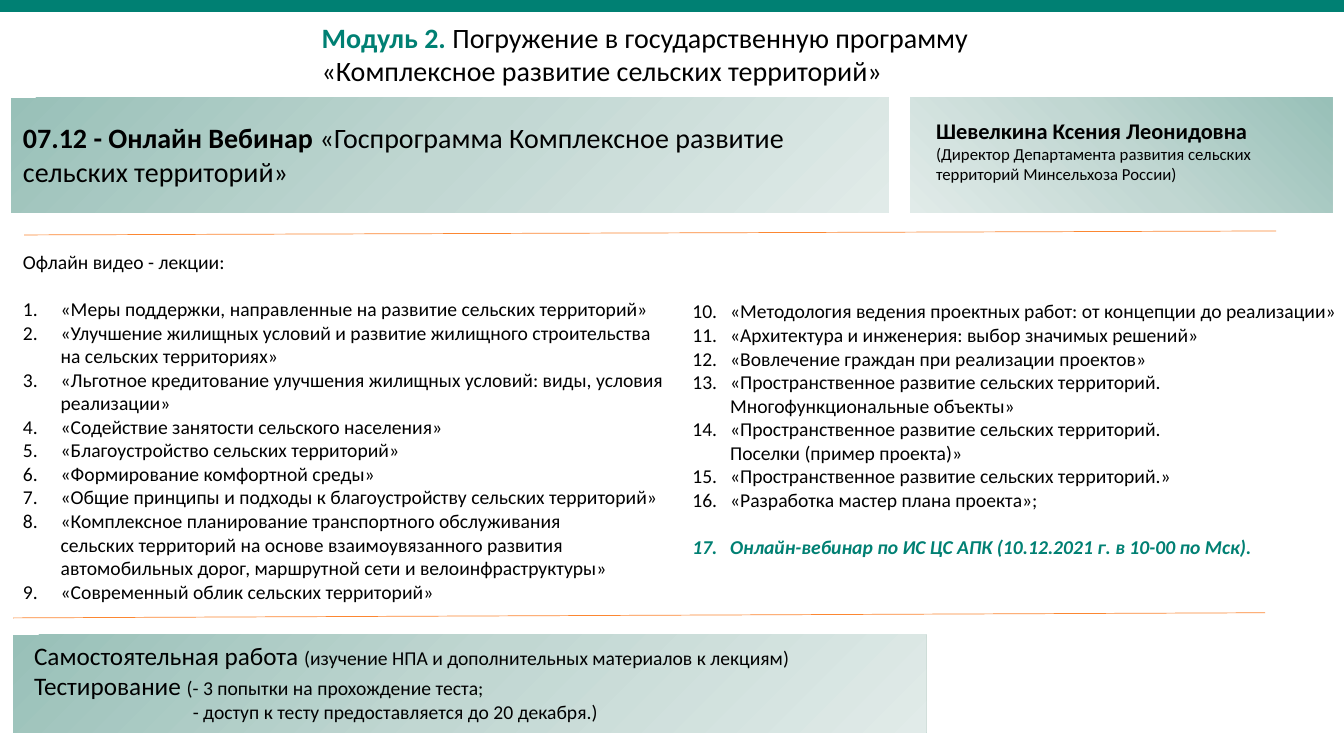
from lxml.etree import SubElement
from pptx import Presentation
from pptx.dml.color import RGBColor
from pptx.enum.shapes import MSO_CONNECTOR, MSO_SHAPE
from pptx.enum.text import MSO_ANCHOR, MSO_AUTO_SIZE, PP_ALIGN
from pptx.oxml import parse_xml
from pptx.oxml.ns import nsdecls, qn
from pptx.util import Cm, Pt

FONT = "Calibri"
GREEN = RGBColor(0x00, 0x80, 0x73)
BLACK = RGBColor(0x00, 0x00, 0x00)
ORANGE = RGBColor(0xFC, 0x87, 0x32)
CARD_STOPS = [(0, RGBColor(0x98, 0xC0, 0xB8)), (50, RGBColor(0xC1, 0xD7, 0xD2)),
              (100, RGBColor(0xE1, 0xEB, 0xE9))]
LINEAR = '<a:lin ang="2700000" scaled="0"/>'
RADIAL = '<a:path path="circle"><a:fillToRect l="100000" b="100000"/></a:path>'

# Content: a paragraph is a list of (text, size, bold) runs
module = [("Модуль 2. ", 20, True),
          ("Погружение в государственную программу «Комплексное развитие сельских территорий»", 20, False)]
webinar = [[("07.12 - Онлайн Вебинар ", 20, True),
            ("«Госпрограмма Комплексное развитие сельских территорий»", 20, False)]]
speaker = [[("Шевелкина Ксения Леонидовна", 16, True)],
           [("(Директор Департамента развития сельских территорий Минсельхоза России)", 12, False)]]
lectures_heading = "Офлайн видео - лекции:"
lectures = [
    "«Меры поддержки, направленные на развитие сельских территорий»",
    "«Улучшение жилищных условий и развитие жилищного строительства на сельских территориях»",
    "«Льготное кредитование улучшения жилищных условий: виды, условия реализации»",
    "«Содействие занятости сельского населения»",
    "«Благоустройство сельских территорий»",
    "«Формирование комфортной среды»",
    "«Общие принципы и подходы к благоустройству сельских территорий»",
    "«Комплексное планирование транспортного обслуживания\vсельских территорий на основе "
    "взаимоувязанного развития\vавтомобильных дорог, маршрутной сети и велоинфраструктуры»",
    "«Современный облик сельских территорий»",
    "«Методология ведения проектных работ: от концепции до реализации»",
    "«Архитектура и инженерия: выбор значимых решений»",
    "«Вовлечение граждан при реализации проектов»",
    "«Пространственное развитие сельских территорий. Многофункциональные объекты»",
    "«Пространственное развитие сельских территорий.\vПоселки (пример проекта)»",
    "«Пространственное развитие сельских территорий.»",
    "«Разработка мастер плана проекта»;",
]
final_webinar = "Онлайн-вебинар по ИС ЦС АПК (10.12.2021 г. в 10-00 по Мск)."
LEFT_COUNT = 9
homework = [[("Самостоятельная работа ", 18, False),
             ("(изучение НПА и дополнительных материалов к лекциям)", 14, False)],
            [("Тестирование ", 18, False), ("(- 3 попытки на прохождение теста;", 14, False)],
            [("- доступ к тесту предоставляется до 20 декабря.)", 14, False)]]

# Places in cm: left, top, width, height
SLIDE_WIDTH, SLIDE_HEIGHT = 33.87, 19.05
TOP_BAR = (0, 0, SLIDE_WIDTH, 0.3)
TITLE = (7.85, 0.38, 21.06, 1.96)
CARDS = [((22.94, 2.46, 10.64, 2.9), RADIAL),
         ((0.28, 2.46, 22.12, 2.9), LINEAR),
         ((0.33, 16, 23.01, 2.46), LINEAR)]
WEBINAR = (0.33, 2.92, 21.23, 1.96)
SPEAKER = (23.34, 2.82, 9.86, 1.96)
LEFT_LECTURES = (0.33, 6.17, 16.87, 9.25)
RIGHT_LECTURES = (17.2, 7.42, 16.87, 6.83)
HOMEWORK = (0.61, 16, 23.04, 3.05)
RULES = [(0.61, 5.92, 32.16, 5.82), (0.33, 15.57, 31.88, 15.44)]
NUMBER_INDENT = Cm(0.95)
BLANK_LINE = Pt(17)


def cm(place):
    return [Cm(value) for value in place]


def add_panel(place):
    panel = slide.shapes.add_shape(MSO_SHAPE.RECTANGLE, *cm(place))
    panel.shadow.inherit = False
    panel.line.fill.background()
    return panel


def add_card(place, direction):
    card = add_panel(place)
    card.fill.gradient()
    stops = "".join(f'<a:gs pos="{pos * 1000}"><a:srgbClr val="{color}"/></a:gs>'
                    for pos, color in CARD_STOPS)
    properties = card._element.spPr
    properties.replace(
        properties.find(qn("a:gradFill")),
        parse_xml(f'<a:gradFill {nsdecls("a")} rotWithShape="1">'
                  f'<a:gsLst>{stops}</a:gsLst>{direction}</a:gradFill>'))


def add_rule(ends):
    rule = slide.shapes.add_connector(MSO_CONNECTOR.STRAIGHT, *cm(ends))
    rule.line.color.rgb = ORANGE
    rule.line.width = Pt(0.5)
    SubElement(rule._element.spPr, qn("a:effectLst"))


def add_text_frame(place):
    frame = slide.shapes.add_textbox(*cm(place)).text_frame
    frame.word_wrap = True
    return frame


def next_paragraph(frame):
    first = frame.paragraphs[0]
    return frame.add_paragraph() if first.runs else first


def set_font(font, size, color=BLACK, bold=False):
    font.name, font.size, font.bold = FONT, Pt(size), bold
    font.color.rgb = color


def add_runs(paragraph, runs):
    for text, size, bold in runs:
        run = paragraph.add_run()
        run.text = text
        set_font(run.font, size, bold=bold)


def add_block(place, paragraphs):
    frame = add_text_frame(place)
    for runs in paragraphs:
        add_runs(next_paragraph(frame), runs)
    return frame


def add_lecture(frame, text, start=1):
    paragraph = next_paragraph(frame)
    properties = paragraph._p.get_or_add_pPr()
    properties.set("marL", str(NUMBER_INDENT))
    properties.set("indent", str(-NUMBER_INDENT))
    SubElement(properties, qn("a:buFont"), typeface="+mj-lt")
    SubElement(properties, qn("a:buAutoNum"), type="arabicPeriod", startAt=str(start))
    paragraph.text = text
    set_font(paragraph.font, 14)
    return paragraph


presentation = Presentation()
presentation.slide_width, presentation.slide_height = Cm(SLIDE_WIDTH), Cm(SLIDE_HEIGHT)
slide = presentation.slides.add_slide(presentation.slide_layouts[5])

# Top bar and title
top_bar = add_panel(TOP_BAR)
top_bar.fill.solid()
top_bar.fill.fore_color.rgb = GREEN

title = slide.shapes.title
title.left, title.top, title.width, title.height = cm(TITLE)
title_frame = title.text_frame
title_frame.word_wrap = True
title_frame.auto_size = MSO_AUTO_SIZE.NONE
title_frame.vertical_anchor = MSO_ANCHOR.TOP
heading = title_frame.paragraphs[0]
heading.alignment = PP_ALIGN.LEFT
heading._p.get_or_add_pPr().set("marR", str(Cm(1.5)))
add_runs(heading, module)
heading.runs[0].font.color.rgb = GREEN

# Cards and dividing lines
for place, direction in CARDS:
    add_card(place, direction)
for ends in RULES:
    add_rule(ends)

# Webinar and speaker
add_block(WEBINAR, webinar)
add_block(SPEAKER, speaker)

# Lectures in two columns
left_column = add_block(LEFT_LECTURES, [[(lectures_heading, 14, False)]])
for lecture in lectures[:LEFT_COUNT]:
    add_lecture(left_column, lecture)
left_column.paragraphs[1].space_before = BLANK_LINE

right_column = add_text_frame(RIGHT_LECTURES)
for lecture in lectures[LEFT_COUNT:]:
    add_lecture(right_column, lecture, LEFT_COUNT + 1)
closing = add_lecture(right_column, final_webinar, LEFT_COUNT + 1)
closing.space_before = BLANK_LINE
set_font(closing.font, 14, GREEN, True)
closing.font.italic = True

# Homework and test
homework_frame = add_block(HOMEWORK, homework)
homework_frame.paragraphs[-1]._p.get_or_add_pPr().set("marL", str(Cm(4)))

presentation.save("out.pptx")
